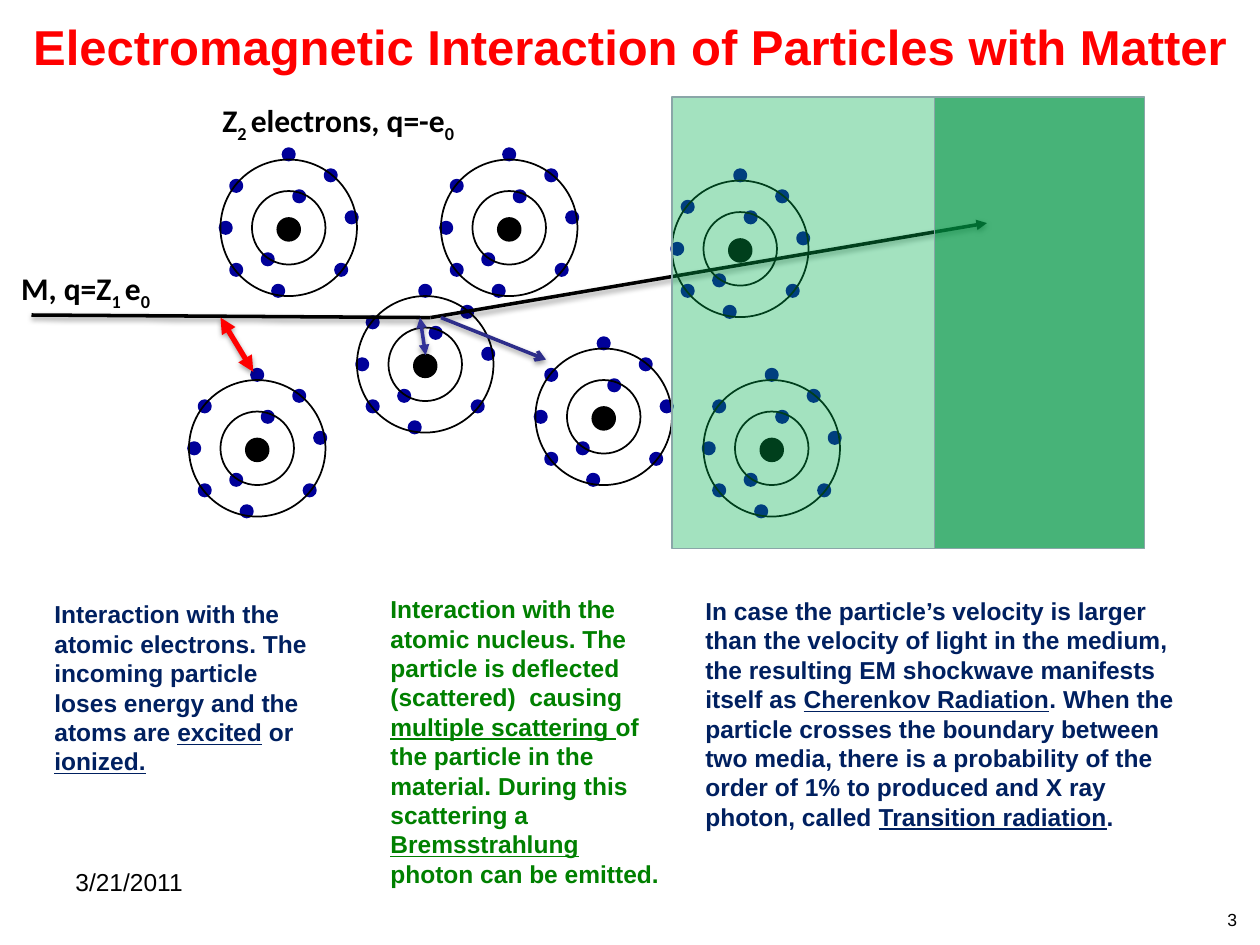
from lxml import etree
from pptx import Presentation
from pptx.dml.color import RGBColor
from pptx.enum import shapes, text
from pptx.oxml import ns
from pptx.util import Pt

BLACK = RGBColor(0x00, 0x00, 0x00)
RED = RGBColor(0xFF, 0x00, 0x00)
NAVY = RGBColor(0x00, 0x20, 0x60)
GREEN = RGBColor(0x00, 0x80, 0x00)
ELECTRON_BLUE = RGBColor(0x00, 0x00, 0x99)
INDIGO = RGBColor(0x33, 0x33, 0x99)
DARK_INDIGO = RGBColor(0x2D, 0x2D, 0x8A)
LIGHT_MEDIUM = RGBColor(0x00, 0xB0, 0x50)
DENSE_MEDIUM = RGBColor(0x00, 0x96, 0x44)
MEDIUM_EDGE = RGBColor(0x8A, 0xA6, 0xA8)

TITLE = "Electromagnetic Interaction of Particles with Matter"

# Atoms: left and top of the outer shell; the parts lie on a 6 pt grid inside
GRID = 6
ATOMS = [(204, 169.2), (306, 199.2), (384, 103.2), (252, 91.2),
         (402, 217.2), (126, 91.2), (108, 217.2)]
ELECTRONS = [(7, 3), (12, 5), (5, 12), (4, 9), (1, 2),
             (11, 10), (6, -1), (10, 1), (1, 10), (0, 6)]
SHELLS = [(3, 7), (0, 13)]  # offset, diameter
NUCLEUS = (5.5, 5.65, 2)    # left, top, diameter

# Tracks and forces: start, end, colour, width, head arrow, tail arrow
LINES = [
    ((246, 181.5), (564, 127.5), BLACK, 2, None, "triangle"),
    ((18, 180), (246, 181.5), BLACK, 2, None, None),
    ((126, 181.5), (144.75, 212.5), RED, 3, "triangle", "triangle"),
    ((240, 181.5), (243.25, 203), INDIGO, 2, "triangle", "triangle"),
    ((252, 181.5), (312, 205.5), DARK_INDIGO, 2, None, "arrow"),
]

# Media: left, width, colour, opacity in percent
MEDIA_TOP, MEDIA_HEIGHT = 55.5, 258
MEDIA = [(384, 150, LIGHT_MEDIUM, 36), (534, 120, DENSE_MEDIUM, 72)]

# Texts: box, font, size, bold, colour, alignment, wrap, runs (text, style)
LEFT, RIGHT = text.PP_ALIGN.LEFT, text.PP_ALIGN.RIGHT
TEXTS = [
    ((120, 54, 153.5, 29), "Calibri", 18, True, BLACK, LEFT, False,
     [("Z", ""), ("2 ", "sub"), ("electrons, q=-e", ""), ("0", "sub")]),
    ((5, 150, 91, 29), "Calibri", 18, True, BLACK, LEFT, False,
     [("M, q=Z", ""), ("1 ", "sub"), ("e", ""), ("0", "sub")]),
    ((24, 339, 168, 160), "Arial", 14, True, NAVY, LEFT, True,
     [("Interaction with the atomic electrons. The incoming particle loses "
       "energy and the atoms are ", ""),
      ("excited", "underline"), (" or ", ""), ("ionized.", "underline")]),
    ((216, 336, 168, 177), "Arial", 14, True, GREEN, LEFT, True,
     [("Interaction with the atomic nucleus. The particle is deflected "
       "(scattered)  causing ", ""),
      ("multiple scattering ", "underline"),
      ("of the particle in the material. During this scattering a ", ""),
      ("Bremsstrahlung ", "underline"), ("photon can be emitted.", "")]),
    ((396, 337, 288, 143), "Arial", 14, True, NAVY, LEFT, True,
     [("In case the particle’s velocity is larger than the velocity of light "
       "in the medium, the resulting EM shockwave manifests itself as ", ""),
      ("Cherenkov Radiation", "underline"),
      (". When the particle crosses the boundary between two media, there is "
       "a probability of the order of 1% to produced and X ray photon, "
       "called ", ""),
      ("Transition radiation", "underline"), (".", "")]),
    ((36, 492, 168, 37), "Arial", 14, False, BLACK, LEFT, True,
     [("3/21/2011", "")]),
    ((684, 516, 30, 19), "Arial", 10, False, BLACK, RIGHT, True, [("3", "")]),
]


def add_child(parent, tag, **attributes):
    return etree.SubElement(parent, ns.qn(tag), attributes)


def format_font(font, name, size, bold, color):
    font.name, font.size, font.bold = name, Pt(size), bold
    font.color.rgb = color


def add_preset(owner, kind, box, fill, line, width):
    shape = owner.shapes.add_shape(kind, *map(Pt, box))
    shape.shadow.inherit = False
    if fill is None:
        shape.fill.background()
    else:
        shape.fill.solid()
        shape.fill.fore_color.rgb = fill
    shape.line.color.rgb = line
    shape.line.width = Pt(width)
    return shape


def add_atom(slide, left, top):
    atom = slide.shapes.add_group_shape()

    def add_circle(x, y, diameter, fill, line, width):
        box = (left + x * GRID, top + y * GRID, diameter * GRID, diameter * GRID)
        add_preset(atom, shapes.MSO_SHAPE.OVAL, box, fill, line, width)

    add_circle(*NUCLEUS, BLACK, BLACK, 2)
    for x, y in ELECTRONS:
        add_circle(x, y, 1, ELECTRON_BLUE, ELECTRON_BLUE, 2)
    for offset, diameter in SHELLS:
        add_circle(offset, offset, diameter, None, BLACK, 1)


def add_line(slide, start, end, color, width, head, tail):
    connector = slide.shapes.add_connector(
        shapes.MSO_CONNECTOR.STRAIGHT, *map(Pt, start + end))
    connector.line.color.rgb = color
    connector.line.width = Pt(width)
    properties = connector._element.spPr
    for tag, arrow in (("a:headEnd", head), ("a:tailEnd", tail)):
        if arrow:
            add_child(properties.find(ns.qn("a:ln")), tag, type=arrow)
    effects = add_child(properties, "a:effectLst")
    shadow = add_child(effects, "a:outerShdw", blurRad=str(Pt(3.1)),
                       dist=str(Pt(1.6)), dir="5400000", rotWithShape="0")
    shadow_color = add_child(shadow, "a:srgbClr", val="000000")
    add_child(shadow_color, "a:alpha", val="38000")


def add_text(slide, box, name, size, bold, color, alignment, wrap, runs):
    frame = slide.shapes.add_textbox(*map(Pt, box)).text_frame
    frame.word_wrap = wrap
    paragraph = frame.paragraphs[0]
    paragraph.alignment = alignment
    format_font(paragraph.font, name, size, bold, color)
    for words, style in runs:
        run = paragraph.add_run()
        run.text = words
        if style == "underline":
            run.font.underline = True
        elif style == "sub":
            run.font._element.set("baseline", "-25000")


def main():
    presentation = Presentation()
    presentation.slide_width, presentation.slide_height = Pt(720), Pt(540)
    slide = presentation.slides.add_slide(presentation.slide_layouts[5])

    # Title
    title = slide.shapes.title
    title.left, title.top, title.width, title.height = map(Pt, (0, 6, 720, 41))
    title.text_frame.text = TITLE
    title.text_frame.auto_size = text.MSO_AUTO_SIZE.NONE
    title.text_frame.vertical_anchor = text.MSO_ANCHOR.TOP
    paragraph = title.text_frame.paragraphs[0]
    paragraph.alignment = text.PP_ALIGN.CENTER
    format_font(paragraph.font, "Arial", 28, True, RED)

    # Diagram: atoms, then tracks, then the translucent media over them
    for left, top in ATOMS:
        add_atom(slide, left, top)
    for line in LINES:
        add_line(slide, *line)
    for left, width, color, opacity in MEDIA:
        medium = add_preset(slide, shapes.MSO_SHAPE.RECTANGLE,
                            (left, MEDIA_TOP, width, MEDIA_HEIGHT),
                            color, MEDIUM_EDGE, 0)
        fill_color = medium._element.spPr.find(
            ns.qn("a:solidFill")).find(ns.qn("a:srgbClr"))
        add_child(fill_color, "a:alpha", val=str(opacity * 1000))

    # Labels, explanations, date and page number
    for item in TEXTS:
        add_text(slide, *item)

    presentation.save("out.pptx")


if __name__ == "__main__":
    main()
